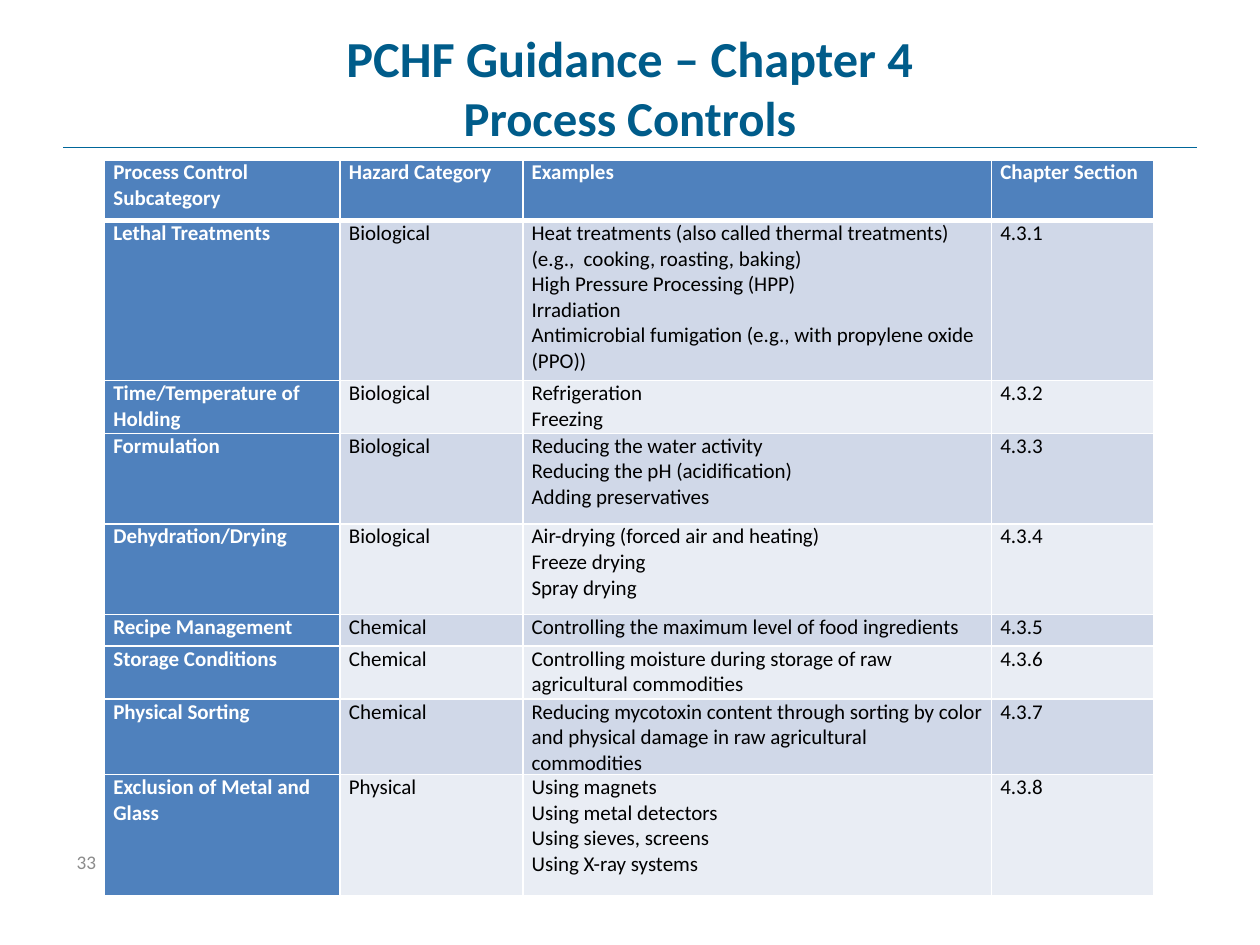
"""Build the slide that lists process controls by guidance chapter section."""
from lxml.etree import SubElement
from pptx import Presentation
from pptx.dml.color import RGBColor
from pptx.enum.shapes import MSO_CONNECTOR as Connector
from pptx.enum.text import MSO_ANCHOR as Anchor, PP_ALIGN as Align
from pptx.oxml import parse_xml
from pptx.oxml.ns import nsdecls, qn
from pptx.util import Inches, Pt

TITLE = [("PCHF Guidance – Chapter 4", 28.8), ("Process Controls", 27.9)]
PAGE_NUMBER = "33"
HEADER = ["Process Control Subcategory", "Hazard Category", "Examples", "Chapter Section"]
CONTROLS = [
    ("Lethal Treatments", "Biological", [
        "Heat treatments (also called thermal treatments) (e.g.,  cooking, roasting, baking)",
        "High Pressure Processing (HPP)",
        "Irradiation",
        "Antimicrobial fumigation (e.g., with propylene oxide (PPO))"]),
    ("Time/Temperature of Holding", "Biological", ["Refrigeration", "Freezing"]),
    ("Formulation", "Biological", [
        "Reducing the water activity",
        "Reducing the pH (acidification)",
        "Adding preservatives"]),
    ("Dehydration/Drying", "Biological", [
        "Air-drying (forced air and heating)", "Freeze drying", "Spray drying"]),
    ("Recipe Management", "Chemical", ["Controlling the maximum level of food ingredients"]),
    ("Storage Conditions", "Chemical", [
        "Controlling moisture during storage of raw agricultural commodities"]),
    ("Physical Sorting", "Chemical", [
        "Reducing mycotoxin content through sorting by color and physical damage "
        "in raw agricultural commodities"]),
    ("Exclusion of Metal and Glass", "Physical", [
        "Using magnets", "Using metal detectors", "Using sieves, screens",
        "Using X-ray systems"]),
]
COLUMN_WIDTHS = [1.87, 1.45, 3.72, 1.29]
ROW_HEIGHTS = [0.48, 1.27, 0.42, 0.72, 0.72, 0.25, 0.42, 0.6, 0.96]
BLUE, BANDS = "4F81BD", ["E9EDF4", "D0D8E8"]
CELL_FORMAT = {"margin_left": Inches(0.07), "margin_right": Inches(0.07),
               "margin_top": 0, "margin_bottom": 0, "vertical_anchor": Anchor.TOP}


def color(value):
    return RGBColor.from_string(value)


def apply(target, values):
    for name, value in values.items():
        setattr(target, name, value)


def style(font, size, shade, bold=False):
    apply(font, {"name": "Calibri", "size": Pt(size), "bold": bold})
    font.color.rgb = color(shade)


def add_box(page, left, top, width, height, **values):
    box = page.shapes.add_textbox(*map(Inches, (left, top, width, height)))
    apply(box.text_frame, {"word_wrap": True, **values})
    return box.text_frame.paragraphs[0]


def add_rule(page):
    rule = page.shapes.add_connector(
        Connector.STRAIGHT, *map(Inches, (0.5, 1.17, 9.5, 1.17)))
    rule.line.color.rgb = color("006699")
    rule.line.width = Pt(0.75)
    SubElement(rule._element.spPr, qn("a:effectLst"))


def add_title(page):
    para = add_box(page, 0.5, 0.17, 9, 1.03, vertical_anchor=Anchor.MIDDLE,
                   margin_top=0, margin_bottom=0)
    para.alignment = Align.CENTER
    for index, (text, size) in enumerate(TITLE):
        if index:
            para.add_line_break()
        span = para.add_run()
        span.text = text
        style(span.font, size, "005C8A", True)


def set_borders(cell, row):
    widths = {"L": 1, "R": 1, "T": 3 if row == 1 else 1, "B": 3 if row == 0 else 1}
    for index, (side, width) in enumerate(widths.items()):
        border = parse_xml(
            f'<a:ln{side} {nsdecls("a")} w="{Pt(width)}"><a:solidFill>'
            f'<a:srgbClr val="FFFFFF"/></a:solidFill></a:ln{side}>')
        cell._tc.get_or_add_tcPr().insert(index, border)


def fill_cell(cell, text, row, column):
    strong = row == 0 or column == 0
    apply(cell, CELL_FORMAT)
    cell.text = text
    cell.fill.solid()
    cell.fill.fore_color.rgb = color(BLUE if strong else BANDS[row % 2])
    for para in cell.text_frame.paragraphs:
        style(para.font, 12, "FFFFFF" if strong else "000000", strong)
    set_borders(cell, row)


def add_controls(page):
    rows = [HEADER] + [
        (name, hazard, "\n".join(examples), f"4.3.{number}")
        for number, (name, hazard, examples) in enumerate(CONTROLS, 1)]
    table = page.shapes.add_table(
        len(rows), len(HEADER), Inches(0.83), Inches(1.27),
        Inches(sum(COLUMN_WIDTHS)), Inches(sum(ROW_HEIGHTS))).table
    for column, width in zip(table.columns, COLUMN_WIDTHS):
        column.width = Inches(width)
    for row, (texts, height) in enumerate(zip(rows, ROW_HEIGHTS)):
        table.rows[row].height = Inches(height)
        for column, text in enumerate(texts):
            fill_cell(table.cell(row, column), text, row, column)


def main():
    deck = Presentation()
    apply(deck, {"slide_width": Inches(10), "slide_height": Inches(7.5)})
    page = deck.slides.add_slide(deck.slide_layouts[6])
    add_rule(page)
    add_title(page)
    add_controls(page)
    number = add_box(page, 0.51, 6.7, 2.33, 0.4)
    number.text = PAGE_NUMBER
    style(number.font, 11, "8C8C8C")
    deck.save("out.pptx")


if __name__ == "__main__":
    main()
